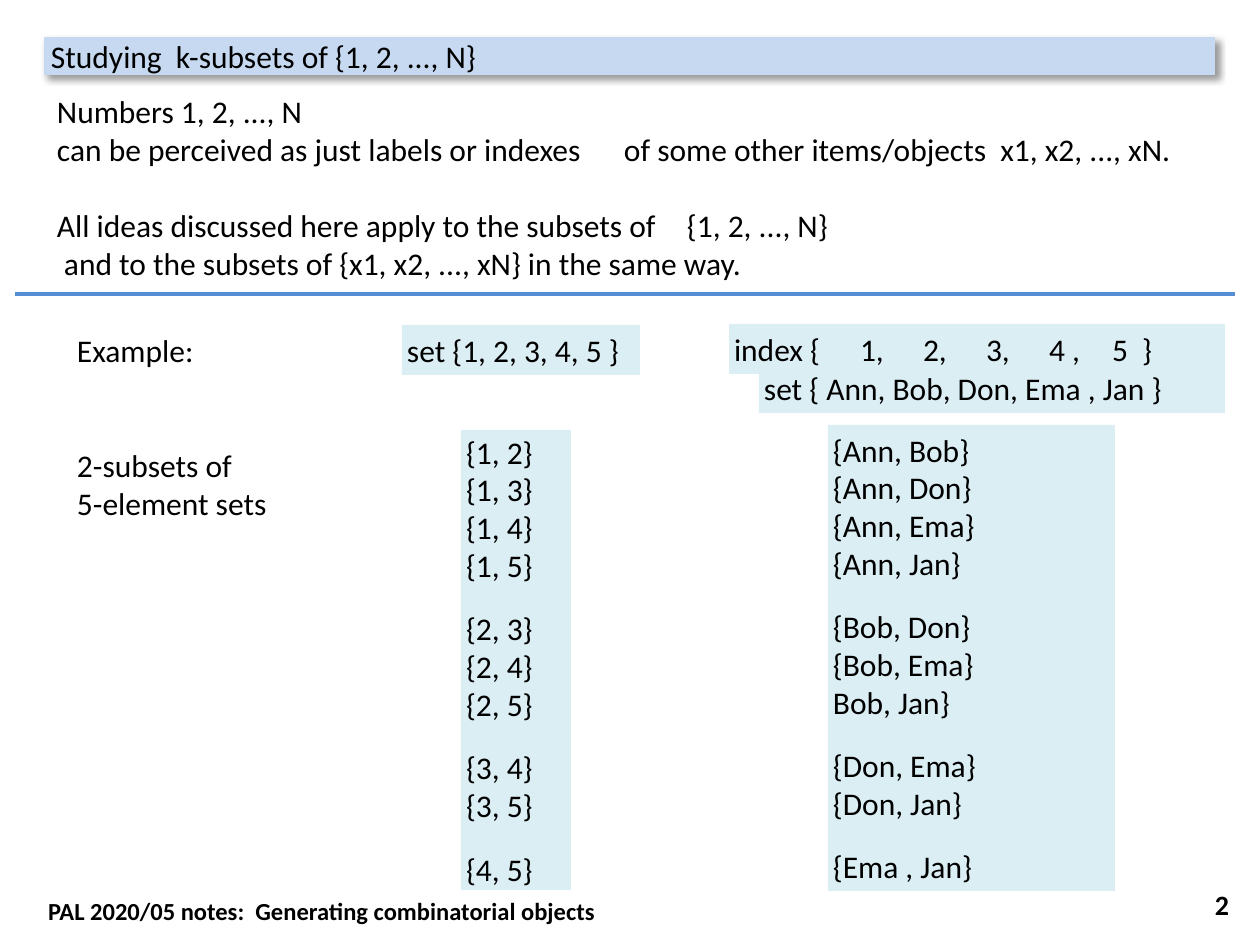
from dataclasses import dataclass
from itertools import combinations, groupby

from lxml import etree
from pptx import Presentation
from pptx.dml.color import RGBColor
from pptx.enum.shapes import MSO_CONNECTOR, MSO_SHAPE
from pptx.enum.text import MSO_ANCHOR, MSO_AUTO_SIZE, PP_ALIGN
from pptx.oxml.ns import qn
from pptx.util import Emu, Pt

TOP, MIDDLE = MSO_ANCHOR.TOP, MSO_ANCHOR.MIDDLE
LEFT, RIGHT = PP_ALIGN.LEFT, PP_ALIGN.RIGHT
RECT, STRAIGHT = MSO_SHAPE.RECTANGLE, MSO_CONNECTOR.STRAIGHT
FIXED_SIZE = MSO_AUTO_SIZE.NONE
PX_PER_INCH = 126


@dataclass(frozen=True)
class Theme:
    font: str = "Calibri"
    text: RGBColor = RGBColor(0x00, 0x00, 0x00)
    title_fill: RGBColor = RGBColor(0xC6, 0xD9, 0xF1)
    box_fill: RGBColor = RGBColor(0xDB, 0xEE, 0xF4)
    rule: RGBColor = RGBColor(0x55, 0x8E, 0xD5)
    body_size: int = 18
    number_size: int = 16
    footer_size: int = 14
    line_gap: int = 22
    group_gap: float = 14.6


THEME = Theme()


@dataclass(frozen=True)
class Para:
    """A paragraph; gap is in points, indent and tab stops in px."""
    text: str
    gap: float = 0
    indent: int = 0
    tabs: tuple[int, ...] = ()


@dataclass(frozen=True)
class Box:
    left: int
    top: int
    width: int
    height: int
    paras: list[Para]
    insets: tuple[int, int] = (13, 6)
    anchor: MSO_ANCHOR = TOP
    align: PP_ALIGN = LEFT
    size: int = THEME.body_size
    bold: bool = False
    fill: RGBColor | None = None


def px(value: int) -> Emu:
    return Emu(round(value * 914400 / PX_PER_INCH))


def format_para(p, para: Para, box: Box) -> None:
    p.text = para.text
    p.alignment = box.align
    p.line_spacing = 1.0
    p.space_before = Pt(para.gap)
    p_pr = p._p.get_or_add_pPr()
    p_pr.set("marL", str(px(para.indent)))
    p_pr.set("indent", "0")
    etree.SubElement(p_pr, qn("a:buNone"))
    if para.tabs:
        tab_list = etree.SubElement(p_pr, qn("a:tabLst"))
        for stop in para.tabs:
            etree.SubElement(tab_list, qn("a:tab"), pos=str(px(stop)), algn="l")
    for r in p.runs:
        r.font.name = THEME.font
        r.font.size = Pt(box.size)
        r.font.bold = box.bold
        r.font.color.rgb = THEME.text


def fill_box(sp, box: Box) -> None:
    """Place a shape or placeholder and give it the box's fill and text."""
    sp.left, sp.top = px(box.left), px(box.top)
    sp.width, sp.height = px(box.width), px(box.height)
    if box.fill is not None:
        sp.fill.solid()
        sp.fill.fore_color.rgb = box.fill
        sp.line.fill.background()
    tf = sp.text_frame
    tf.word_wrap = True
    tf.auto_size = FIXED_SIZE
    tf.vertical_anchor = box.anchor
    tf.margin_left = tf.margin_right = px(box.insets[0])
    tf.margin_top = tf.margin_bottom = px(box.insets[1])
    for i, para in enumerate(box.paras):
        p = tf.add_paragraph() if i else tf.paragraphs[0]
        format_para(p, para, box)


def add_box(slide, box: Box) -> None:
    frame = px(box.left), px(box.top), px(box.width), px(box.height)
    if box.fill is None:
        sp = slide.shapes.add_textbox(*frame)
    else:
        sp = slide.shapes.add_shape(RECT, *frame)
        sp.shadow.inherit = False
    fill_box(sp, box)


def add_title_shadow(sp) -> None:
    effects = etree.SubElement(sp._element.spPr, qn("a:effectLst"))
    shadow = etree.SubElement(
        effects, qn("a:outerShdw"), blurRad=str(Pt(4)), dist=str(Pt(3)),
        dir=str(45 * 60000), algn="tl", rotWithShape="0")
    color = etree.SubElement(shadow, qn("a:srgbClr"), val=str(THEME.text))
    etree.SubElement(color, qn("a:alpha"), val="40000")


def add_rule(slide, left: int, right: int, y: int) -> None:
    line = slide.shapes.add_connector(STRAIGHT, px(left), px(y), px(right), px(y))
    line.line.color.rgb = THEME.rule
    line.line.width = Pt(2.25)
    etree.SubElement(line._element.spPr, qn("a:effectLst"))


def grouped(groups: list[list[str]]) -> list[Para]:
    """One paragraph per subset, with a gap before each later group."""
    return [Para(text, THEME.group_gap if g and not i else 0)
            for g, group in enumerate(groups) for i, text in enumerate(group)]


NUMBER_SUBSETS = [[f"{{{a}, {b}}}" for a, b in pairs]
                  for _, pairs in groupby(combinations(range(1, 6), 2), lambda pair: pair[0])]
NAME_SUBSETS = [
    ["{Ann, Bob}", "{Ann, Don}", "{Ann, Ema}", "{Ann, Jan}"],
    ["{Bob, Don}", "{Bob, Ema}", "Bob, Jan}"],
    ["{Don, Ema}", "{Don, Jan}"],
    ["{Ema , Jan}"],
]

TITLE = Box(44, 37, 1171, 38, [Para("Studying  k-subsets of {1, 2, ..., N}")],
            (7, 0), MIDDLE, fill=THEME.title_fill)
INTRO = Box(44, 86, 1171, 204, [
    Para("Numbers 1, 2, ..., N"),
    Para("can be perceived as just labels or indexes\tof some other items/objects"
         "  x1, x2, ..., xN.", tabs=(566,)),
    Para("All ideas discussed here apply to the subsets of\t{1, 2, ..., N}",
         THEME.line_gap, tabs=(620,)),
    Para("and to the subsets of {x1, x2, ..., xN} in the same way.", indent=7),
])
LABEL, LIST = (5, 6), (5, 0)
BOXES = [
    Box(948, 879, 294, 50, [Para("2")], anchor=MIDDLE, align=RIGHT,
        size=THEME.number_size, bold=True),
    Box(35, 890, 764, 43, [Para("PAL 2020/05 notes:  Generating combinatorial objects")],
        size=THEME.footer_size, bold=True),
    Box(461, 430, 110, 460, grouped(NUMBER_SUBSETS), LIST, MIDDLE, fill=THEME.box_fill),
    Box(402, 325, 238, 50, [Para("set {1, 2, 3, 4, 5 }")], LABEL, fill=THEME.box_fill),
    Box(828, 425, 287, 466, grouped(NAME_SUBSETS), LIST, MIDDLE, fill=THEME.box_fill),
    Box(759, 363, 466, 50, [Para("set { Ann, Bob, Don, Ema , Jan }")], LABEL,
        fill=THEME.box_fill),
    Box(729, 324, 496, 50,
        [Para("index {\t1,\t2,\t3,\t4 ,\t5  }", tabs=(115, 173, 240, 299, 366))],
        LABEL, fill=THEME.box_fill),
    Box(64, 325, 297, 204, [
        Para("Example:"),
        Para("2-subsets of", 2 * THEME.line_gap),
        Para("5-element sets"),
    ]),
]


def main() -> None:
    prs = Presentation()
    prs.slide_width, prs.slide_height = px(1260), px(945)
    slide = prs.slides.add_slide(prs.slide_layouts[1])
    title, intro = slide.placeholders
    fill_box(title, TITLE)
    add_title_shadow(title)
    fill_box(intro, INTRO)
    for box in BOXES:
        add_box(slide, box)
    add_rule(slide, 15, 1235, 294)
    prs.save("out.pptx")


if __name__ == "__main__":
    main()
